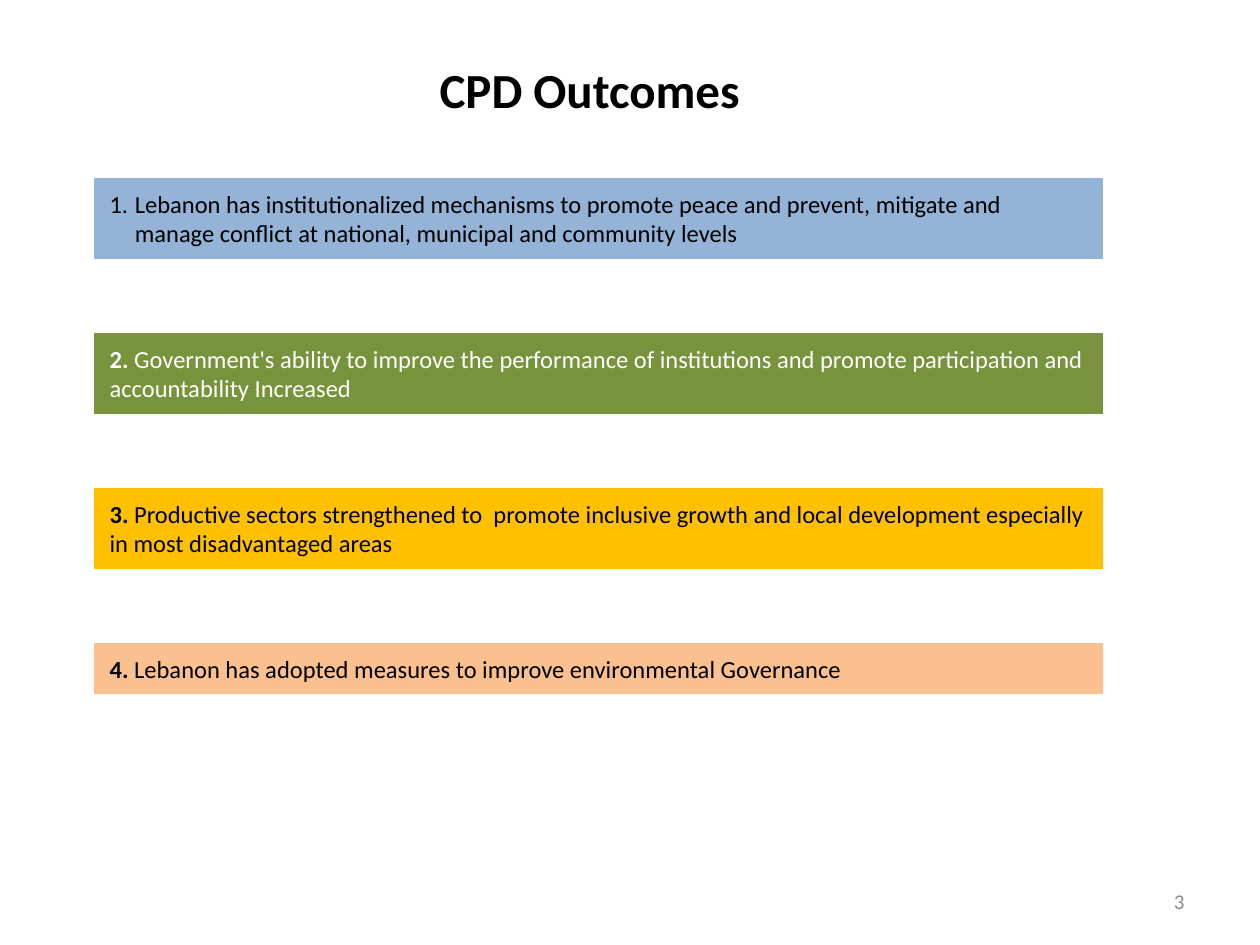
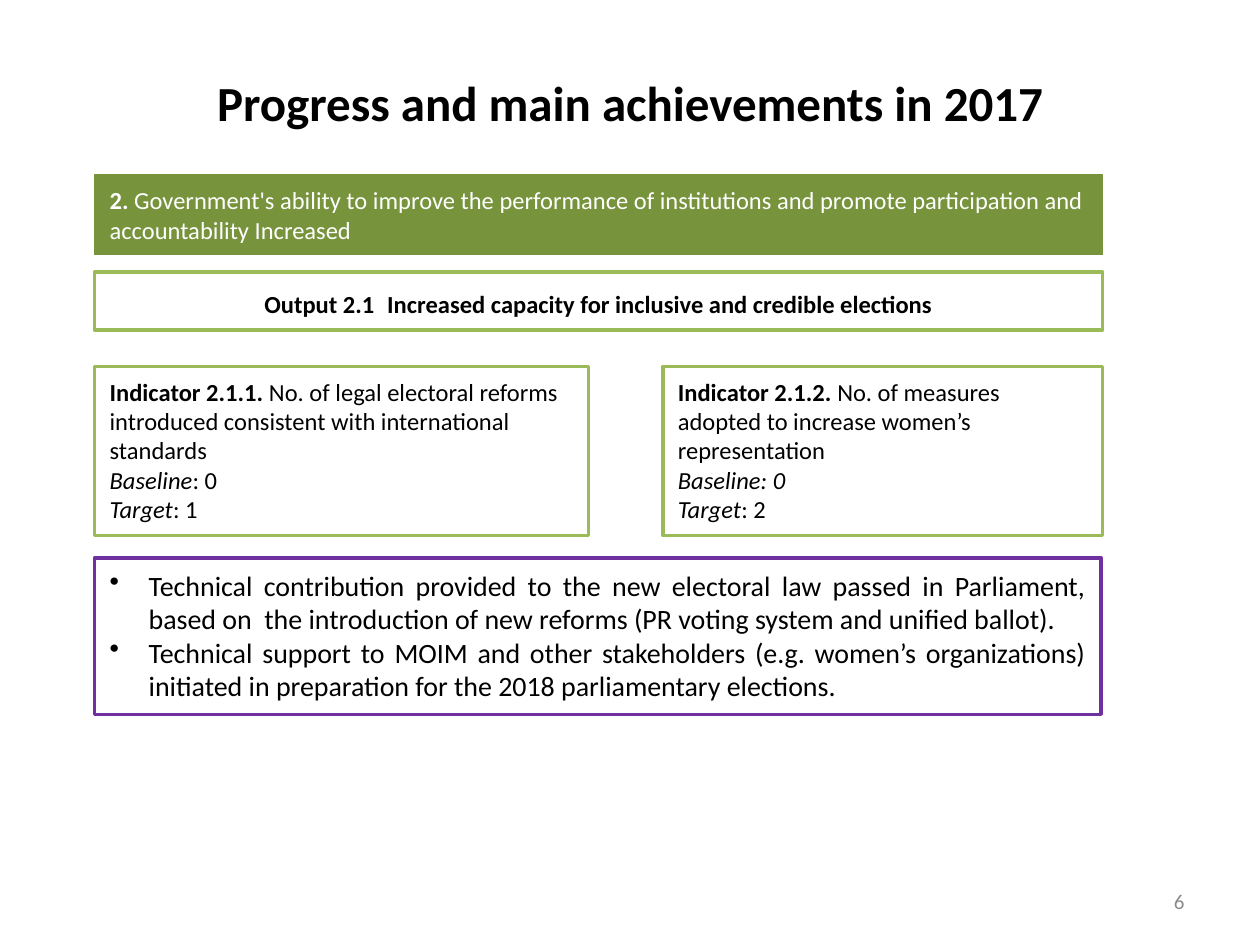
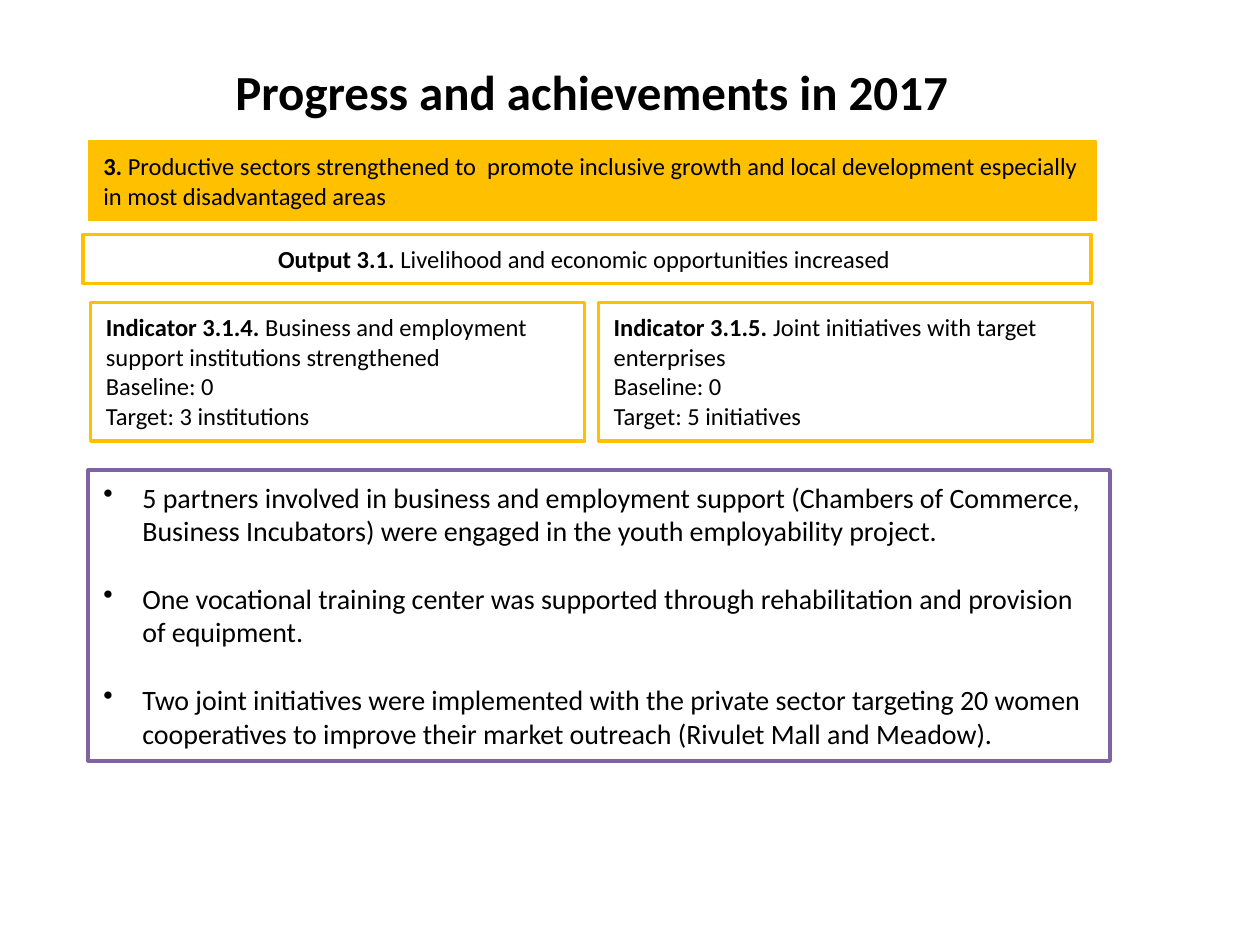
from lxml import etree
from pptx import Presentation
from pptx.dml.color import RGBColor
from pptx.enum.shapes import MSO_SHAPE
from pptx.enum.text import MSO_ANCHOR, MSO_AUTO_SIZE, PP_ALIGN
from pptx.oxml.ns import qn
from pptx.util import Inches, Pt

RECT = MSO_SHAPE.RECTANGLE
TOP, MIDDLE = MSO_ANCHOR.TOP, MSO_ANCHOR.MIDDLE
GROW = MSO_AUTO_SIZE.SHAPE_TO_FIT_TEXT
LEFT, CENTER, RIGHT, JUSTIFY = PP_ALIGN.LEFT, PP_ALIGN.CENTER, PP_ALIGN.RIGHT, PP_ALIGN.JUSTIFY

BLACK = RGBColor(0x00, 0x00, 0x00)
WHITE = RGBColor(0xFF, 0xFF, 0xFF)
GRAY = RGBColor(0x8C, 0x8C, 0x8C)
BLUE = RGBColor(0x95, 0xB3, 0xD7)
GREEN = RGBColor(0x77, 0x93, 0x3C)
LIME = RGBColor(0x9B, 0xBB, 0x59)
GOLD = RGBColor(0xFF, 0xC0, 0x00)
PEACH = RGBColor(0xFA, 0xC0, 0x90)
PURPLE = RGBColor(0x70, 0x30, 0xA0)
VIOLET = RGBColor(0x80, 0x64, 0xA2)

FONT = "Calibri"
BOLD = {"bold": True}
ITALIC = {"italic": True}
WIDE = {"size": Pt(18)}
PLAIN = {}
BAND_W, BAND_H = 8, 0.63
ROW_STEP = 1.23
BULLET = ("a:buChar", {"char": "•"}, 0.31)
NUMBER = ("a:buAutoNum", {"type": "arabicPeriod"}, 0.2)

PEACE = dict(fill=BLUE, mark=NUMBER, paras=[[
    ("Lebanon has institutionalized mechanisms to promote peace and prevent, mitigate "
     "and manage conflict at national, municipal and community levels", PLAIN)]])
STATE = dict(fill=GREEN, color=WHITE, paras=[[
    ("2. ", BOLD),
    ("Government's ability to improve the performance of institutions and promote "
     "participation and accountability Increased", PLAIN)]])
GROWTH = dict(fill=GOLD, paras=[[
    ("3. ", BOLD),
    ("Productive sectors strengthened to  promote inclusive growth and local "
     "development especially in most disadvantaged areas", PLAIN)]])
NATURE = dict(fill=PEACH, paras=[[
    ("4.", BOLD),
    (" Lebanon has adopted measures to improve environmental Governance", PLAIN)]])


def set_all(target, values):
    """Set each attribute named in a dict."""
    for name, value in values.items():
        setattr(target, name, value)


def add_mark(para, mark):
    """Give a paragraph a bullet or number with a hanging indent."""
    tag, values, indent = mark
    props = para._p.get_or_add_pPr()
    props.set("marL", str(Inches(indent)))
    props.set("indent", str(-Inches(indent)))
    etree.SubElement(props, qn(tag), values)


def write(frame, paras, size=14, color=BLACK, align=LEFT, mark=None, gap=0):
    """Fill a text frame with paragraphs made of styled runs."""
    for index, runs in enumerate(paras):
        para = frame.add_paragraph() if index else frame.paragraphs[0]
        if mark:
            add_mark(para, mark)
        para.alignment = align
        if index and gap:
            para.space_before = Pt(gap)
        for text, style in runs:
            run = para.add_run()
            run.text = text
            set_all(run.font, {"name": FONT, "size": Pt(size), "bold": False, **style})
            run.font.color.rgb = color


def add_label(slide, box, text, style=PLAIN, anchor=TOP, **look):
    """Add a one-line text box."""
    frame = slide.shapes.add_textbox(*map(Inches, box)).text_frame
    set_all(frame, {"word_wrap": True, "vertical_anchor": anchor})
    write(frame, [[(text, style)]], **look)


def add_title(slide, box, text):
    """Add the slide title."""
    add_label(slide, box, text, BOLD, size=28, align=CENTER)


def add_page(slide, number):
    """Add the page number at the lower right."""
    add_label(slide, (7.17, 6.95, 2.33, 0.4), number, anchor=MIDDLE,
              size=12, color=GRAY, align=RIGHT)


def add_panel(slide, box, paras, fill=WHITE, edge=None, **look):
    """Add a text panel, either filled or outlined."""
    shape = slide.shapes.add_shape(RECT, *map(Inches, box))
    shape.shadow.inherit = False
    shape.fill.solid()
    shape.fill.fore_color.rgb = fill
    shape.line.color.rgb = edge or fill
    shape.line.width = Pt(2 if edge else 0.75)
    frame = shape.text_frame
    set_all(frame, {
        "word_wrap": True, "auto_size": GROW, "vertical_anchor": TOP,
        "margin_left": Inches(0.12), "margin_right": Inches(0.12),
        "margin_top": Inches(0.08), "margin_bottom": Inches(0.08)})
    write(frame, paras, **look)


def add_goals(slide, left, top):
    """Stack the four outcome bands at equal steps."""
    for row, goal in enumerate((PEACE, STATE, GROWTH, NATURE)):
        height = 0.39 if goal is NATURE else BAND_H
        add_panel(slide, (left, top + row * ROW_STEP, BAND_W, height), **goal)


def add_report(slide, left, top, goal, edge, output, cards, notes):
    """Place an outcome band, its output, indicators and results."""
    def place(box, **look):
        """Add a panel at an offset from the report's corner."""
        x, y, width, height = box
        add_panel(slide, (left + x, top + y, width, height), **look)

    place((0, 0, BAND_W, BAND_H), **goal)
    place(output[0], paras=[output[1]], edge=edge, align=CENTER)
    for box, paras in cards:
        place(box, paras=paras, edge=edge)
    place(notes.pop("box"), size=16, mark=BULLET, **notes)


def main():
    """Build the three slides."""
    prs = Presentation()
    set_all(prs, {"slide_width": Inches(10), "slide_height": Inches(7.5)})
    goals, votes, jobs = [prs.slides.add_slide(prs.slide_layouts[6]) for _ in range(3)]

    add_title(goals, (2.25, 0.42, 4.86, 0.56), "CPD Outcomes")
    add_goals(goals, 0.75, 1.42)
    add_page(goals, "3")

    add_title(votes, (1.25, 0.53, 7.5, 0.56), "Progress and main achievements in 2017")
    add_report(
        votes, 0.75, 1.39, STATE, LIME,
        output=((0, 0.77, BAND_W, 0.46), [
            ("Output 2.1 ", BOLD), (" ", WIDE),
            ("Increased capacity for inclusive and credible elections", BOLD)]),
        cards=[
            ((0, 1.52, 3.92, 1.34), [
                [("Indicator 2.1.1.", BOLD),
                 (" No. of legal electoral reforms introduced consistent with "
                  "international standards", PLAIN)],
                [("Baseline", ITALIC), (": 0", PLAIN)],
                [("Target", ITALIC), (": 1", PLAIN)]]),
            ((4.51, 1.52, 3.49, 1.34), [
                [("Indicator 2.1.2. ", BOLD),
                 ("No. of measures adopted to increase women’s representation", PLAIN)],
                [("Baseline: 0", ITALIC)],
                [("Target", ITALIC), (": 2", PLAIN)]])],
        notes=dict(box=(0, 3.04, 7.99, 1.24), edge=PURPLE, align=JUSTIFY, paras=[
            [("Technical contribution provided to the new electoral law passed in "
              "Parliament, based on  the introduction of new reforms (PR voting system "
              "and unified ballot).", PLAIN)],
            [("Technical support to MOIM and other stakeholders (e.g. women’s "
              "organizations) initiated in preparation for the 2018 parliamentary "
              "elections.", PLAIN)]]))
    add_page(votes, "6")

    add_title(jobs, (1.57, 0.44, 6.25, 0.56), "Progress and achievements in 2017")
    add_report(
        jobs, 0.7, 1.12, GROWTH, GOLD,
        output=((-0.04, 0.74, BAND_W, 0.39), [
            ("Output 3.1.", BOLD),
            (" Livelihood and economic opportunities increased ", PLAIN)]),
        cards=[
            ((0.02, 1.28, 3.92, 1.1), [
                [("Indicator 3.1.4. ", BOLD),
                 ("Business and employment support institutions strengthened", PLAIN)],
                [("Baseline: 0", PLAIN)],
                [("Target: 3 institutions", PLAIN)]]),
            ((4.05, 1.28, 3.92, 1.1), [
                [("Indicator 3.1.5. ", BOLD),
                 ("Joint initiatives with target enterprises", PLAIN)],
                [("Baseline: 0", PLAIN)],
                [("Target: 5 initiatives", PLAIN)]])],
        notes=dict(box=(0, 2.61, 8.11, 2.31), edge=VIOLET, gap=19.5, paras=[
            [("5 partners involved in business and employment support (Chambers of "
              "Commerce, Business Incubators) were engaged in the youth employability "
              "project.", PLAIN)],
            [("One vocational training center was supported through rehabilitation and "
              "provision of equipment.", PLAIN)],
            [("Two joint initiatives were implemented with the private sector targeting "
              "20 women cooperatives to improve their market outreach (Rivulet Mall and "
              "Meadow).", PLAIN)]]))

    prs.save("out.pptx")


if __name__ == "__main__":
    main()
